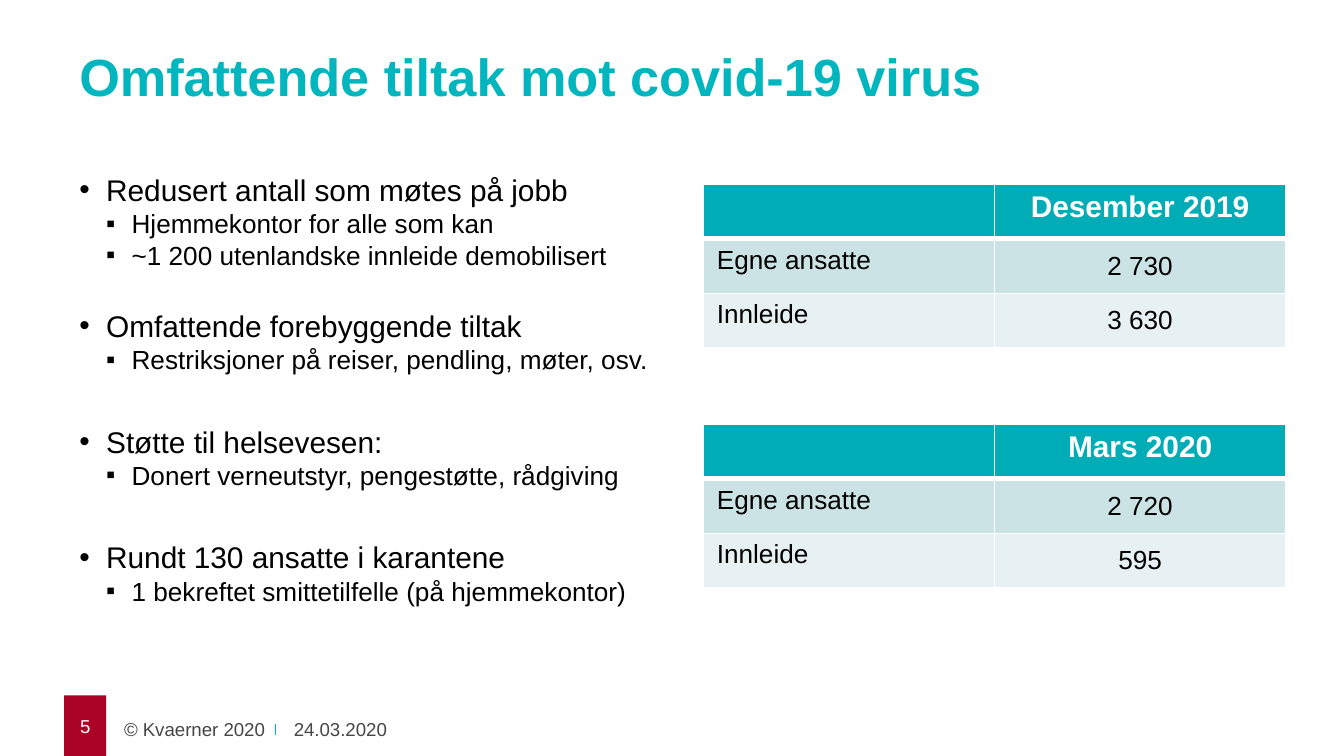
import pptx
import pptx.dml.color
import pptx.enum.shapes
import pptx.enum.text
import pptx.oxml
import pptx.oxml.ns
import pptx.util
import lxml.etree

Pt = pptx.util.Pt
qn = pptx.oxml.ns.qn
ALIGN = pptx.enum.text.PP_ALIGN
ANCHOR = pptx.enum.text.MSO_ANCHOR
SHAPE = pptx.enum.shapes.MSO_SHAPE
CONNECTOR = pptx.enum.shapes.MSO_CONNECTOR

colors = {
    "teal": "00B6BE",
    "header": "00ACB6",
    "band": "CCE3E5",
    "light": "E7F1F3",
    "red": "AB0325",
    "gray": "464646",
    "black": "000000",
    "white": "FFFFFF",
}


def rgb(name):
    return pptx.dml.color.RGBColor.from_string(colors[name])


def write(paragraph, text, size, color, bold=False, alignment=ALIGN.LEFT):
    paragraph.text = text
    paragraph.alignment = alignment
    formats = {"name": "Arial", "size": Pt(size), "bold": bold}
    for font in (paragraph.font, paragraph.runs[0].font):
        for attribute, value in formats.items():
            setattr(font, attribute, value)
        font.color.rgb = rgb(color)


presentation = pptx.Presentation()
presentation.slide_width = Pt(720)
presentation.slide_height = Pt(405)
slide = presentation.slides.add_slide(presentation.slide_layouts[5])
shapes = slide.shapes

title = shapes.title
body = shapes.add_textbox(0, 0, 0, 0)
copyright_box = shapes.add_textbox(0, 0, 0, 0)
date_box = shapes.add_textbox(0, 0, 0, 0)
page_box = shapes.add_shape(SHAPE.RECTANGLE, 0, 0, 0, 0)
page_box.shadow.inherit = False
page_box.fill.solid()
page_box.fill.fore_color.rgb = rgb("red")
page_box.line.fill.background()

frames = [
    (title, (42.5, 10.8, 635, 46.8), (0, 0, 0, 0), ANCHOR.BOTTOM),
    (body, (42.5, 92, 312, 285), (0, 0, 0, 0), ANCHOR.TOP),
    (copyright_box, (55, 381, 94, 19.5), (7.2, 3.6, 7.2, 3.6), ANCHOR.TOP),
    (date_box, (150.3, 388, 68, 8.8), (7.2, 0, 0, 0), ANCHOR.BOTTOM),
    (page_box, (34.4, 372.5, 22.5, 32.5), (0, 0, 0, 0), ANCHOR.MIDDLE),
]
for shape, bounds, insets, anchor in frames:
    for attribute, value in zip(("left", "top", "width", "height"), bounds):
        setattr(shape, attribute, Pt(value))
    for side, value in zip(("left", "top", "right", "bottom"), insets):
        setattr(shape.text_frame, f"margin_{side}", Pt(value))
    shape.text_frame.word_wrap = True
    shape.text_frame.auto_size = pptx.enum.text.MSO_AUTO_SIZE.NONE
    shape.text_frame.vertical_anchor = anchor

labels = [
    (title, "Omfattende tiltak mot covid-19 virus", 28, "teal", True, ALIGN.LEFT),
    (copyright_box, "© Kvaerner 2020", 10, "gray", False, ALIGN.RIGHT),
    (date_box, "24.03.2020", 10, "gray", False, ALIGN.LEFT),
    (page_box, "5", 10, "white", False, ALIGN.CENTER),
]
for shape, *label in labels:
    write(shape.text_frame.paragraphs[0], *label)

footer_line = shapes.add_connector(CONNECTOR.STRAIGHT, Pt(147.6), Pt(388), Pt(147.6), Pt(394))
footer_line.line.color.rgb = rgb("teal")
footer_line.line.width = Pt(0.75)
lxml.etree.SubElement(footer_line._element.spPr, qn("a:effectLst"))

levels = [
    {"bullet": "•", "size": 16, "margin": 14.4, "hang": 14.4},
    {"bullet": "▪", "size": 14, "margin": 28, "hang": 13.6},
]
bullets = [
    (0, 0, "Redusert antall som møtes på jobb"),
    (1, 0, "Hjemmekontor for alle som kan"),
    (1, 0, "~1 200 utenlandske innleide demobilisert"),
    (0, 20, "Omfattende forebyggende tiltak"),
    (1, 0, "Restriksjoner på reiser, pendling, møter, osv."),
    (0, 26, "Støtte til helsevesen:"),
    (1, 0, "Donert verneutstyr, pengestøtte, rådgiving"),
    (0, 26, "Rundt 130 ansatte i karantene"),
    (1, 0, "1 bekreftet smittetilfelle (på hjemmekontor)"),
]
for index, (level, space, text) in enumerate(bullets):
    frame = body.text_frame
    paragraph = frame.add_paragraph() if index else frame.paragraphs[0]
    style = levels[level]
    paragraph.level = level
    paragraph.space_before = Pt(space)
    properties = paragraph._p.get_or_add_pPr()
    properties.set("marL", str(Pt(style["margin"])))
    properties.set("indent", str(-Pt(style["hang"])))
    lxml.etree.SubElement(properties, qn("a:buFont"), typeface="Arial")
    lxml.etree.SubElement(properties, qn("a:buChar"), char=style["bullet"])
    write(paragraph, text, style["size"], "black")

tables = [
    (98.6, "Desember 2019", "2 730", "3 630"),
    (227.2, "Mars 2020", "2 720", "595"),
]
row_fills = ["header", "band", "light"]
for top, month, employees, hired in tables:
    graphic = shapes.add_table(3, 2, Pt(376.8), Pt(top), Pt(312), Pt(87.9))
    table = graphic.table
    table.horz_banding = False
    rows = [("", month), ("Egne ansatte", employees), ("Innleide", hired)]
    for row_index, row in enumerate(rows):
        table.rows[row_index].height = Pt(29.3)
        for column_index, text in enumerate(row):
            cell = table.cell(row_index, column_index)
            header = row_index == 0
            if text:
                write(
                    cell.text_frame.paragraphs[0],
                    text,
                    16 if header else 14,
                    "white" if header else "black",
                    header,
                    ALIGN.CENTER if column_index else ALIGN.LEFT,
                )
            if column_index and not header:
                cell.vertical_anchor = ANCHOR.MIDDLE
            properties = cell._tc.get_or_add_tcPr()
            widths = {"L": 1, "R": 1, "T": 3 if row_index == 1 else 1, "B": 3 if header else 1}
            for side, width in widths.items():
                border = lxml.etree.SubElement(properties, qn(f"a:ln{side}"), w=str(Pt(width)))
                fill = lxml.etree.SubElement(border, qn("a:solidFill"))
                lxml.etree.SubElement(fill, qn("a:srgbClr"), val=colors["white"])
            cell.fill.solid()
            cell.fill.fore_color.rgb = rgb(row_fills[row_index])

presentation.save("out.pptx")
